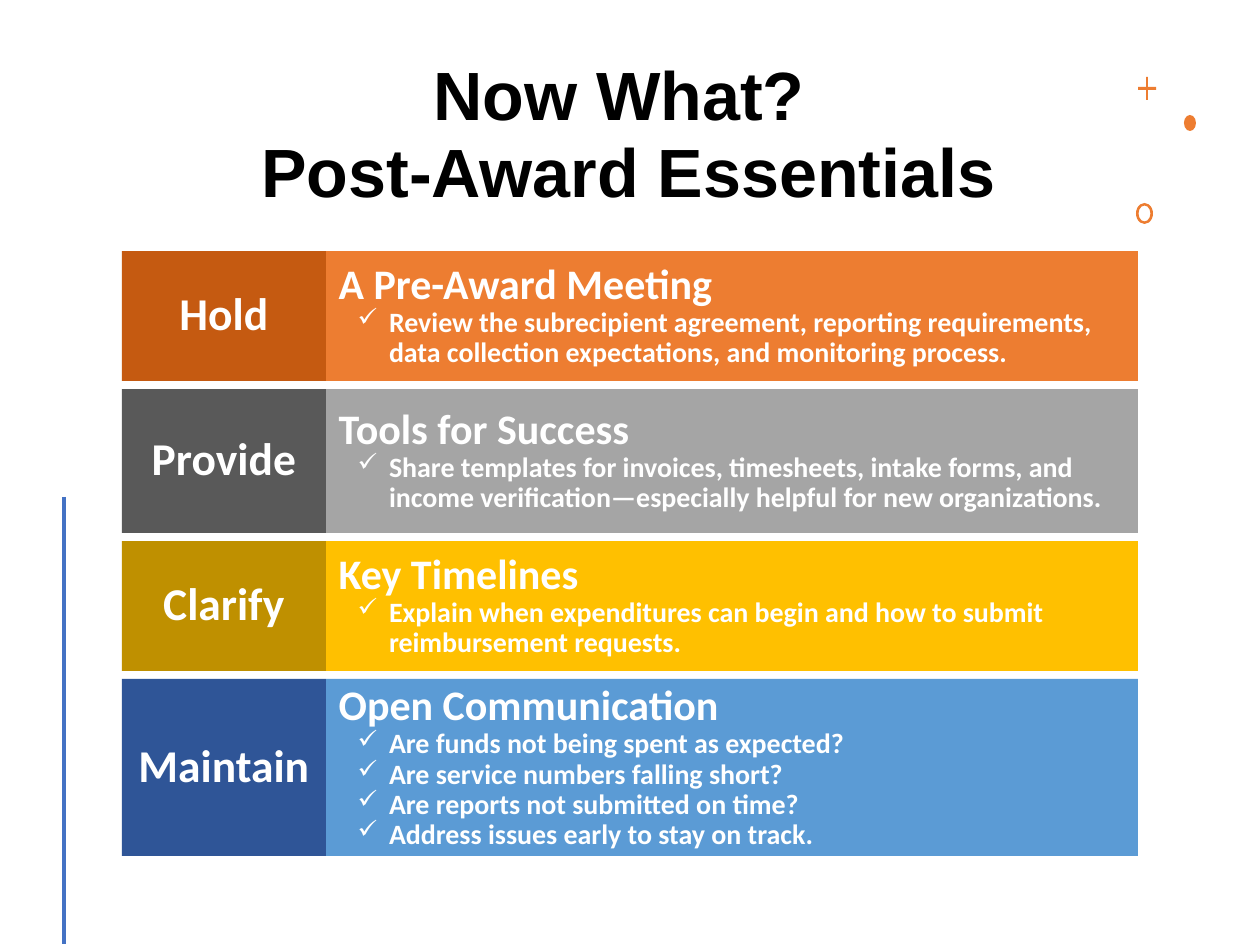
from lxml import etree
from pptx import Presentation
from pptx import util as u
from pptx.dml.color import RGBColor
from pptx.enum import shapes, text
from pptx.oxml import ns

PX = 914400 / 126
WHITE = RGBColor(0xFF, 0xFF, 0xFF)
BLACK = RGBColor(0x00, 0x00, 0x00)
ORANGE = RGBColor(0xED, 0x7D, 0x31)
DARK_ORANGE = RGBColor(0xC5, 0x5A, 0x11)
GRAY = RGBColor(0xA5, 0xA5, 0xA5)
DARK_GRAY = RGBColor(0x59, 0x59, 0x59)
GOLD = RGBColor(0xFF, 0xC0, 0x00)
DARK_GOLD = RGBColor(0xBF, 0x90, 0x00)
BLUE = RGBColor(0x5B, 0x9B, 0xD5)
DARK_BLUE = RGBColor(0x2F, 0x55, 0x97)
RULE_BLUE = RGBColor(0x44, 0x72, 0xC4)

LEFT, LABEL_WIDTH, BODY_WIDTH = 122, 204, 812
FIRST_TOP, ROW_GAP = 251, 8
CHECK = "✓"

ROWS = [
    ("Hold", DARK_ORANGE, ORANGE, 130, "A Pre-Award Meeting", [
        (CHECK, "Review the subrecipient agreement, reporting requirements,"),
        (None, "data collection expectations, and monitoring process.")]),
    ("Provide", DARK_GRAY, GRAY, 144, "Tools for Success", [
        (CHECK, "Share templates for invoices, timesheets, intake forms, and "
                "income verification—especially helpful for new organizations.")]),
    ("Clarify", DARK_GOLD, GOLD, 130, "Key Timelines", [
        (CHECK, "Explain when expenditures can begin and how to submit "
                "reimbursement requests.")]),
    ("Maintain", DARK_BLUE, BLUE, 177, "Open Communication", [
        (CHECK, "Are funds not being spent as expected?"),
        (CHECK, "Are service numbers falling short?"),
        (CHECK, "Are reports not submitted on time?"),
        (CHECK, "Address issues early to stay on track.")]),
]


def px(*lengths):
    """Turn pixel lengths into EMU."""
    return [u.Emu(round(length * PX)) for length in lengths]


def paint(shape, color):
    """Give a shape a plain fill with no line or shadow."""
    shape.shadow.inherit = False
    shape.fill.solid()
    shape.fill.fore_color.rgb = color
    shape.line.fill.background()
    return shape


def add_block(page, kind, box, color):
    """Add a filled preset shape."""
    return paint(page.shapes.add_shape(kind, *px(*box)), color)


def prepare_frame(shape):
    """Set a wrapped, middle-anchored frame without margins."""
    frame = shape.text_frame
    frame.word_wrap = True
    frame.vertical_anchor = text.MSO_ANCHOR.MIDDLE
    frame.margin_left = frame.margin_right = 0
    frame.margin_top = frame.margin_bottom = 0
    return frame


def write(para, words, size, color=WHITE, font="Calibri",
          align=text.PP_ALIGN.LEFT, spacing=0.9, indent=0, hang=0,
          level=0, bullet=None):
    """Fill a paragraph with bold text in the given format."""
    para.alignment = align
    para.line_spacing = spacing
    para.level = level
    props = para._p.get_or_add_pPr()
    props.set("marL", str(u.Inches(indent)))
    props.set("indent", str(u.Inches(-hang)))
    if bullet:
        etree.SubElement(props, ns.qn("a:buSzPct")).set("val", "90000")
        etree.SubElement(props, ns.qn("a:buChar")).set("char", bullet)
    for number, line in enumerate(words.split("\n")):
        if number:
            para.add_line_break()
        span = para.add_run()
        span.text = line
        span.font.name = font
        span.font.size = u.Pt(size)
        span.font.bold = True
        span.font.color.rgb = color


def add_title(page):
    """Add the centred two-line heading."""
    box = page.shapes.add_textbox(*px(122, 53, 1013, 165))
    write(prepare_frame(box).paragraphs[0], "Now What? \nPost-Award Essentials",
          39, color=BLACK, font="Arial", align=text.PP_ALIGN.CENTER, spacing=0.94)


def add_plus(page, left, top, width, height, bar):
    """Draw a thin plus sign."""
    right, bottom = left + width, top + height
    x1, y1 = left + (width - bar) / 2, top + (height - bar) / 2
    x2, y2 = x1 + bar, y1 + bar
    outline = page.shapes.build_freeform(x1, top, scale=PX)
    outline.add_line_segments([
        (x2, top), (x2, y1), (right, y1), (right, y2), (x2, y2), (x2, bottom),
        (x1, bottom), (x1, y2), (left, y2), (left, y1), (x1, y1)], close=True)
    paint(outline.convert_to_shape(), ORANGE)


def add_ornaments(page):
    """Add the plus, dot and ring at the right and the rule at the left."""
    add_plus(page, 1138, 77, 18, 23, 3)
    add_block(page, shapes.MSO_SHAPE.OVAL, (1184, 115, 12, 16), ORANGE)
    ring = add_block(page, shapes.MSO_SHAPE.DONUT, (1136, 203, 17, 21), ORANGE)
    ring.adjustments[0] = 0.15
    rule = page.shapes.add_connector(
        shapes.MSO_CONNECTOR.STRAIGHT, *px(64, 497, 64, 944))
    rule.line.color.rgb = RULE_BLUE
    rule.line.width = u.Pt(2)
    etree.SubElement(rule._element.spPr, ns.qn("a:effectLst"))


def add_row(page, top, label, dark, light, height, heading, details):
    """Add one label block with its heading and details."""
    rect = shapes.MSO_SHAPE.RECTANGLE
    body = add_block(page, rect, (LEFT + LABEL_WIDTH, top, BODY_WIDTH, height), light)
    frame = prepare_frame(body)
    write(frame.paragraphs[0], heading, 24, indent=0.1)
    for bullet, words in details:
        write(frame.add_paragraph(), words, 16, indent=0.5,
              hang=0.25 if bullet else 0, level=1, bullet=bullet)
    tag = add_block(page, rect, (LEFT, top, LABEL_WIDTH, height), dark)
    write(prepare_frame(tag).paragraphs[0], label, 26, align=text.PP_ALIGN.CENTER)


def main():
    """Build and save the slide."""
    deck = Presentation()
    deck.slide_width, deck.slide_height = px(1260, 945)
    page = deck.slides.add_slide(deck.slide_layouts[6])
    add_title(page)
    add_ornaments(page)
    top = FIRST_TOP
    for label, dark, light, height, heading, details in ROWS:
        add_row(page, top, label, dark, light, height, heading, details)
        top += height + ROW_GAP
    deck.save("out.pptx")


if __name__ == "__main__":
    main()
